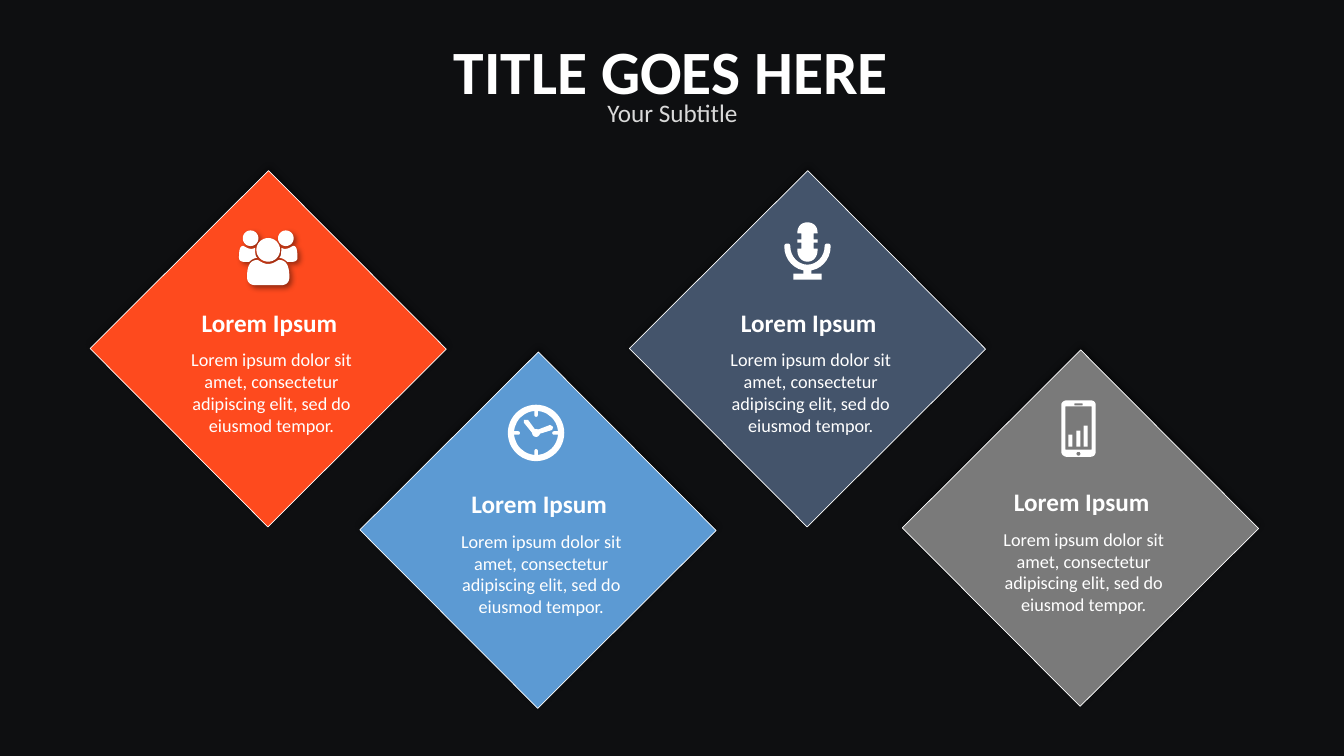
"""Build a dark slide with four text diamonds, each with an icon."""
from math import cos, pi, sin

from lxml.etree import SubElement
from pptx import Presentation
from pptx.dml.color import RGBColor
from pptx.enum.shapes import MSO_SHAPE as Shape
from pptx.enum.text import MSO_ANCHOR, PP_ALIGN
from pptx.oxml.ns import qn
from pptx.util import Cm, Pt


def circle(x, y, r):
    return [(x + r * cos(i * pi / 16), y + r * sin(i * pi / 16)) for i in range(32)]


def box(left, top, right, bottom):
    return [(left, top), (right, top), (right, bottom), (left, bottom)]


def mirror(contour):
    return [tuple(-v if i % 2 == 0 else v for i, v in enumerate(seg)) for seg in contour]


FONT = "Calibri"
BACKGROUND, WHITE, PALE = "0E0F11", "FFFFFF", "D9D9D9"
TITLE, SUBTITLE = "TITLE GOES HERE", "Your Subtitle"
HEADING = "Lorem Ipsum"
BODY = "Lorem ipsum dolor sit amet, consectetur adipiscing elit, sed do eiusmod tempor."
SIDE = 6.35
ICON_UNIT = 0.0254

BACK_BODY = [(-19, 4), (-23, 4), (-26, 4, -29, 3, -29, 0), (-29, -4, -29, -12, -25, -12),
             (-24, -12, -21, -9, -17, -9), (-16, -9, -15, -9, -13, -10),
             (-13, -5, -13, -2, -11, 0), (-14, 0, -17, 2, -19, 4)]
FRONT_BODY = [(13, 27), (-13, 27), (-18, 27, -21, 24, -21, 19), (-21, 12, -20, 2, -11, 2),
              (-9, 2, -6, 6, 0, 6), (6, 6, 9, 2, 11, 2), (20, 2, 21, 12, 21, 19),
              (21, 24, 18, 27, 13, 27)]
MIC_CRADLE = [(0, 19), (-13, 19, -23, 8, -23, -5), (-23, -7, -22, -8, -20, -8),
              (-18, -8, -17, -7, -17, -5), (-17, 5, -9, 13, 0, 13), (9, 13, 17, 5, 17, -5),
              (17, -7, 18, -8, 20, -8), (22, -8, 23, -7, 23, -5), (23, 8, 13, 19, 0, 19)]
MIC_HEAD = [(6, -3), (6, -9), (10, -9), (10, -12), (6, -12), (6, -18), (10, -18), (10, -19),
            (10, -25, 6, -29, 0, -29), (-6, -29, -10, -25, -10, -19), (-10, -18), (-6, -18),
            (-6, -12), (-10, -12), (-10, -9), (-6, -9), (-6, -3), (-10, -3), (-10, -1),
            (-10, 5, -6, 10, 0, 10), (6, 10, 10, 5, 10, -1), (10, -3)]
PHONE_CASE = [(12, -28), (-12, -28), (-14, -28, -17, -26, -17, -24), (-17, 23),
              (-17, 26, -14, 28, -12, 28), (12, 28), (15, 28, 17, 26, 17, 23), (17, -24),
              (17, -26, 15, -28, 12, -28)]

PEOPLE = {"outlines": [[BACK_BODY, mirror(BACK_BODY), circle(-17.5, -19.5, 7.75),
                        circle(17.5, -19.5, 7.75), circle(0, -8, 11.75), FRONT_BODY]],
          "presets": []}
CLOCK = {"outlines": [[[(0, -2), (-3, 1), (-12, -10), (-12, -13), (-8, -13)]],
                      [[(3, 1), (1, -3), (14, -8), (17, -6), (16, -3)]]],
         "presets": [(Shape.DONUT, -28, -28, 56, 56, 0.11), (Shape.OVAL, -4, -4, 8, 8, None)]
         + [(Shape.ROUNDED_RECTANGLE, -1.75, y, 3.5, 11, 0.5) for y in (-27, 16)]
         + [(Shape.ROUNDED_RECTANGLE, x, -1.75, 11, 3.5, 0.5) for x in (-27, 16)]}
MICROPHONE = {"outlines": [[MIC_CRADLE], [MIC_HEAD]],
              "presets": [(Shape.RECTANGLE, -4, 17, 8, 7, None),
                          (Shape.RECTANGLE, -14, 22, 28, 6, None)]}
PHONE = {"outlines": [[PHONE_CASE, box(-13, -22, 13, 21), box(-4, -25, 4, -23),
                       circle(0, 25, 2)]],
         "presets": [(Shape.RECTANGLE, x, 18 - h, 4, h, None)
                     for x, h in ((-10, 12), (-2, 16), (5, 21))]}

DIAMONDS = [
    ("FE4A1E", 6.76, 8.79, PEOPLE, 0, -2.29, True),
    ("5C9AD3", 13.56, 13.36, CLOCK, -0.05, -2.45, False),
    ("44546B", 20.35, 8.79, MICROPHONE, 0, -2.45, False),
    ("7A7A7A", 27.23, 13.31, PHONE, -0.05, -2.51, False),
]


def rgb(value):
    return RGBColor.from_string(value)


def write(tf, text, size, color=WHITE, bold=False):
    tf.word_wrap = True
    tf.vertical_anchor = MSO_ANCHOR.TOP
    p = tf.paragraphs[0]
    p.alignment = PP_ALIGN.CENTER
    r = p.add_run()
    r.text = text
    r.font.name, r.font.size, r.font.bold = FONT, Pt(size), bold
    r.font.color.rgb = rgb(color)


def add_text(s, left, top, width, height, text, **fmt):
    tb = s.shapes.add_textbox(Cm(left), Cm(top), Cm(width), Cm(height))
    write(tb.text_frame, text, **fmt)


def style(sp, color, line=None, shadow=None):
    sp.fill.solid()
    sp.fill.fore_color.rgb = rgb(color)
    if line:
        sp.line.color.rgb = rgb(line)
        sp.line.width = Pt(0.5)
    else:
        sp.line.fill.background()
    sp.shadow.inherit = False
    if shadow is not None:
        effects = sp._element.spPr.find(qn("a:effectLst"))
        outer = SubElement(effects, qn("a:outerShdw"), blurRad=str(Pt(4)), dist=str(Pt(3)),
                           dir=str(shadow * 60000), rotWithShape="0")
        tone = SubElement(outer, qn("a:srgbClr"), val="000000")
        SubElement(tone, qn("a:alpha"), val="40000")


def flatten(contour):
    points = []
    for seg in contour:
        if len(seg) == 2:
            points.append(seg)
            continue
        curve = [points[-1], seg[:2], seg[2:4], seg[4:]]
        for t in (i / 8 for i in range(1, 9)):
            weights = ((1 - t) ** 3, 3 * t * (1 - t) ** 2, 3 * t * t * (1 - t), t ** 3)
            points.append(tuple(sum(w * c[axis] for w, c in zip(weights, curve))
                                for axis in (0, 1)))
    return points


def add_icon(s, icon, x, y, shadow):
    def place(px, py):
        return Cm(x + px * ICON_UNIT), Cm(y + py * ICON_UNIT)

    for contours in icon["outlines"]:
        builder = None
        for contour in contours:
            start, *rest = [place(*point) for point in flatten(contour)]
            if builder is None:
                builder = s.shapes.build_freeform(*start)
            else:
                builder.move_to(*start)
            builder.add_line_segments(rest, close=True)
        style(builder.convert_to_shape(), WHITE, shadow=shadow)
    for kind, left, top, width, height, adjust in icon["presets"]:
        sp = s.shapes.add_shape(kind, *place(left, top),
                                Cm(width * ICON_UNIT), Cm(height * ICON_UNIT))
        if adjust is not None:
            sp.adjustments[0] = adjust
        style(sp, WHITE)


def main():
    prs = Presentation()
    prs.slide_width, prs.slide_height = Cm(33.87), Cm(19.05)
    s = prs.slides.add_slide(prs.slide_layouts[5])
    s.background.fill.solid()
    s.background.fill.fore_color.rgb = rgb(BACKGROUND)

    title = s.shapes.title
    title.left, title.top, title.width, title.height = Cm(9.27), Cm(0.71), Cm(15.29), Cm(2.13)
    write(title.text_frame, TITLE, size=44, bold=True)
    add_text(s, 11.2, 2.34, 11.5, 1.02, SUBTITLE, size=18, color=PALE)

    for color, x, y, icon, dx, dy, icon_shadow in DIAMONDS:
        sp = s.shapes.add_shape(Shape.RECTANGLE, Cm(x - SIDE / 2), Cm(y - SIDE / 2),
                                Cm(SIDE), Cm(SIDE))
        sp.rotation = 315.1
        style(sp, color, line=WHITE, shadow=270)
        add_icon(s, icon, x + dx, y + dy, 45 if icon_shadow else None)
        add_text(s, x - 2.51, y - 1.17, 5.08, 1.02, HEADING, size=18, bold=True)
        add_text(s, x - 2.41, y - 0.13, 4.98, 2.49, BODY, size=13)

    prs.save("out.pptx")


if __name__ == "__main__":
    main()
